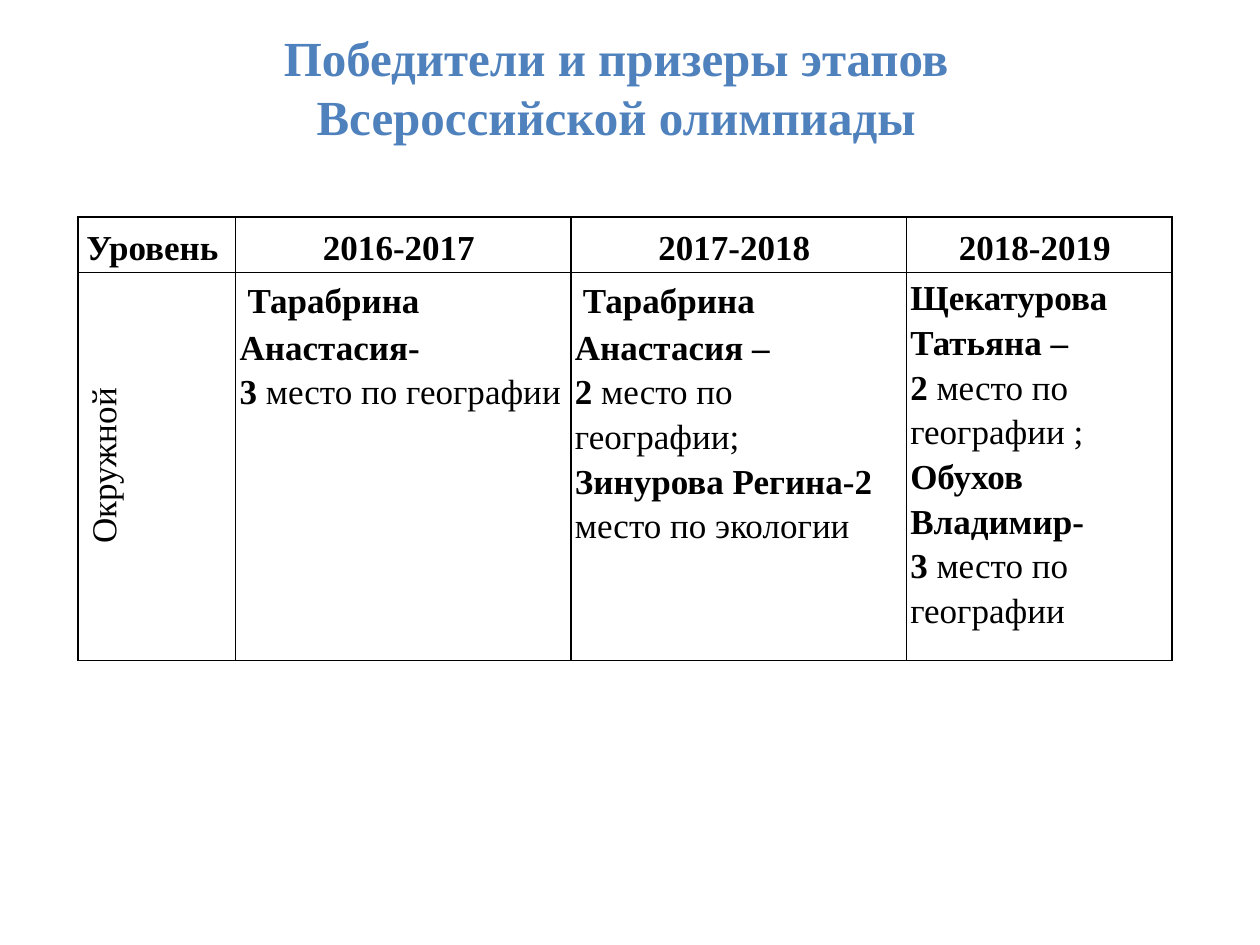
from lxml import etree
from pptx import Presentation
from pptx import util as u
from pptx.dml.color import RGBColor
from pptx.enum import text
from pptx.oxml.ns import qn

BLUE = RGBColor(0x4F, 0x81, 0xBD)
BLACK = RGBColor(0, 0, 0)
FONT = "Times New Roman"

# A cell is a list of paragraphs, a paragraph a list of (text, bold) runs.
HEADERS = ["Уровень ", "2016-2017 ", "2017-2018 ", "2018-2019 "]
LEVEL = [[("Окружной ", False)]]
WINNERS = [
    [[(" ", True), ("Тарабрина Анастасия-", True)],
     [("3", True), (" место по географии", False)]],
    [[(" ", True), ("Тарабрина Анастасия –", True)],
     [("2", True), (" место по географии;", False)],
     [("Зинурова Регина-2", True), (" место по экологии", False)]],
    [[("Щекатурова Татьяна –", True)],
     [("2 ", True), ("место по географии ;", False)],
     [("Обухов Владимир-", True)],
     [("3", True), (" место по географии", False)]],
]
COL_WIDTHS = [3.18, 6.76, 6.76, 5.36]
ROW_HEIGHTS = [1.12, 7.2]


def format_run(r, size, color, bold, font=FONT):
    r.font.name = font
    r.font.size = u.Pt(size)
    r.font.bold = bold
    r.font.color.rgb = color


def add_title(s, left, top, width, height):
    sp = s.shapes.add_textbox(u.Cm(left), u.Cm(top), u.Cm(width), u.Cm(height))
    tf = sp.text_frame
    tf.word_wrap = True
    tf.vertical_anchor = text.MSO_ANCHOR.MIDDLE
    tf.margin_bottom = u.Cm(1.22)  # lifts the lines above the box centre
    p = tf.paragraphs[0]
    p.text = "Победители и призеры этапов\vВсероссийской олимпиады"
    p.alignment = text.PP_ALIGN.CENTER
    for r in p.runs:
        format_run(r, 28, BLUE, True)


def set_borders(cell):
    tc_pr = cell._tc.get_or_add_tcPr()
    for i, side in enumerate(("lnL", "lnR", "lnT", "lnB")):
        ln = etree.Element(qn(f"a:{side}"), w=str(u.Pt(1)))
        fill = etree.SubElement(ln, qn("a:solidFill"))
        etree.SubElement(fill, qn("a:srgbClr"), val=str(BLACK))
        tc_pr.insert(i, ln)


def fill_cell(cell, paragraphs, centered):
    cell.margin_left = cell.margin_right = u.Cm(0.08)
    cell.margin_top, cell.margin_bottom = u.Cm(0.03), 0
    cell.vertical_anchor = text.MSO_ANCHOR.MIDDLE if centered else text.MSO_ANCHOR.TOP
    cell.fill.background()
    set_borders(cell)
    tf = cell.text_frame
    for i, runs in enumerate(paragraphs):
        p = tf.add_paragraph() if i else tf.paragraphs[0]
        p.alignment = text.PP_ALIGN.CENTER if centered else text.PP_ALIGN.LEFT
        p.line_spacing = 1.15
        for words, bold in runs:
            r = p.add_run()
            r.text = words
            format_run(r, 20, BLACK, bold, FONT if words.strip() else "Calibri")


def add_winners_table(s, left, top):
    table = s.shapes.add_table(
        len(ROW_HEIGHTS), len(COL_WIDTHS), u.Cm(left), u.Cm(top),
        u.Cm(sum(COL_WIDTHS)), u.Cm(sum(ROW_HEIGHTS))).table
    table.first_row = table.horz_banding = False
    for col, width in zip(table.columns, COL_WIDTHS):
        col.width = u.Cm(width)
    for row, height in zip(table.rows, ROW_HEIGHTS):
        row.height = u.Cm(height)

    for c, header in enumerate(HEADERS):
        fill_cell(table.cell(0, c), [[(header, True)]], centered=True)
    level = table.cell(1, 0)
    fill_cell(level, LEVEL, centered=True)
    level._tc.get_or_add_tcPr().set("vert", "vert270")
    level.text_frame.paragraphs[0]._p.get_or_add_pPr().set("marL", str(u.Cm(0.2)))
    for c, paragraphs in enumerate(WINNERS, 1):
        fill_cell(table.cell(1, c), paragraphs, centered=False)


def main():
    prs = Presentation()
    prs.slide_width, prs.slide_height = u.Cm(25.4), u.Cm(19.05)
    s = prs.slides.add_slide(prs.slide_layouts[6])
    add_title(s, 0.99, 0.99, 22.86, 2.59)
    add_winners_table(s, 1.57, 4.37)
    prs.save("out.pptx")


if __name__ == "__main__":
    main()
